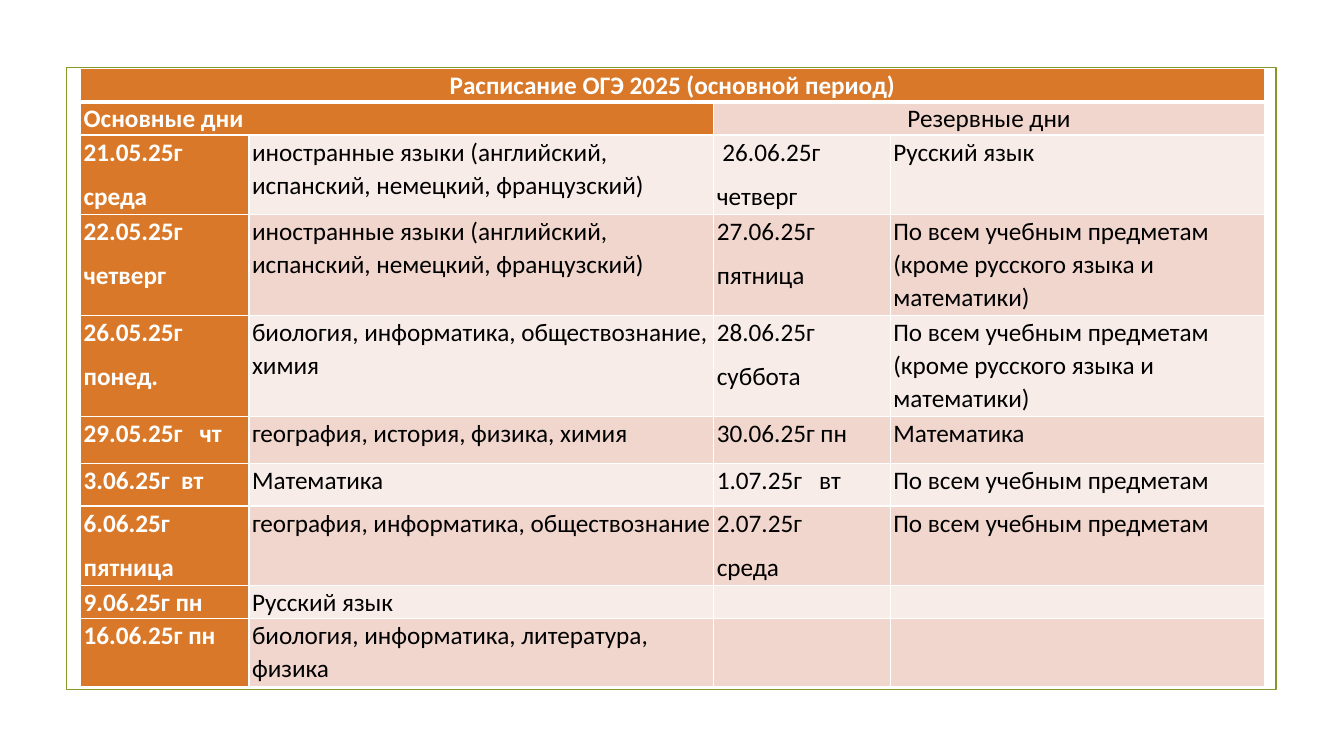
from dataclasses import dataclass

from lxml.etree import SubElement
from pptx import Presentation
from pptx.dml.color import RGBColor
from pptx.enum.shapes import MSO_SHAPE
from pptx.enum.text import PP_ALIGN
from pptx.oxml.ns import qn
from pptx.util import Inches, Pt


@dataclass(frozen=True)
class Theme:
    font: str = "Calibri"
    size: int = 18
    header: str = "D97828"
    dark_band: str = "F1D6CD"
    light_band: str = "F8ECE8"
    frame: str = "83992A"
    white: str = "FFFFFF"
    black: str = "000000"


THEME = Theme()
COLUMN_WIDTHS = [1.67, 4.61, 1.75, 3.71]
ROW_HEIGHTS = [0.33, 0.33, 0.79, 1, 1, 0.47, 0.42, 0.79, 0.33, 0.67]

TITLE = "Расписание ОГЭ 2025 (основной период)"
LANGUAGES = "иностранные языки (английский, испанский, немецкий, французский)"
ALL_SUBJECTS = "По всем учебным предметам"
MOST_SUBJECTS = ALL_SUBJECTS + " (кроме русского языка и математики)"
EXAM_ROWS = [
    ("21.05.25г\nсреда", LANGUAGES, " 26.06.25г\nчетверг", "Русский язык"),
    ("22.05.25г\nчетверг", LANGUAGES, "27.06.25г\nпятница", MOST_SUBJECTS),
    ("26.05.25г\nпонед.", "биология, информатика, обществознание, химия",
     "28.06.25г\nсуббота", MOST_SUBJECTS),
    ("29.05.25г   чт", "география, история, физика, химия", "30.06.25г пн", "Математика"),
    ("3.06.25г  вт", "Математика", "1.07.25г   вт", ALL_SUBJECTS),
    ("6.06.25г\nпятница", "география, информатика, обществознание",
     "2.07.25г\nсреда", ALL_SUBJECTS),
    ("9.06.25г пн", "Русский язык", "", ""),
    ("16.06.25г пн", "биология, информатика, литература, физика", "", ""),
]


def color(value):
    return RGBColor.from_string(value)


def set_all(target, values):
    for name, value in values.items():
        setattr(target, name, value)


def add_frame(page):
    frame = page.shapes.add_shape(
        MSO_SHAPE.RECTANGLE, Inches(0.66), Inches(0.67), Inches(12), Inches(6.17))
    frame.shadow.inherit = False
    frame.fill.background()
    frame.line.color.rgb = color(THEME.frame)
    frame.line.width = Pt(1.25)


def set_borders(cell, bottom_width=1):
    properties = cell._tc.get_or_add_tcPr()
    for side, width in (("L", 1), ("R", 1), ("T", 1), ("B", bottom_width)):
        line = SubElement(properties, qn(f"a:ln{side}"), w=str(Pt(width)))
        fill = SubElement(line, qn("a:solidFill"))
        SubElement(fill, qn("a:srgbClr"), val=THEME.white)


def style_cell(cell, fill, bottom_width=1):
    set_all(cell, {"margin_left": Inches(0.03), "margin_right": Inches(0.03),
                   "margin_top": 0, "margin_bottom": 0})
    set_borders(cell, bottom_width)
    cell.fill.solid()
    cell.fill.fore_color.rgb = color(fill)


def write_cell(cell, text, heading=False, align=PP_ALIGN.LEFT):
    """Write one paragraph per line of text."""
    frame = cell.text_frame
    for index, line in enumerate(text.split("\n")):
        para = frame.paragraphs[0] if index == 0 else frame.add_paragraph()
        set_all(para, {"alignment": align, "line_spacing": 1.07, "space_after": Pt(8)})
        span = para.add_run()
        span.text = line
        set_all(span.font, {"name": THEME.font, "size": Pt(THEME.size), "bold": heading})
        span.font.color.rgb = color(THEME.white if heading else THEME.black)


def add_schedule(page):
    table = page.shapes.add_table(
        len(ROW_HEIGHTS), len(COLUMN_WIDTHS), Inches(0.8), Inches(0.68),
        Inches(sum(COLUMN_WIDTHS)), Inches(sum(ROW_HEIGHTS))).table
    for column, width in zip(table.columns, COLUMN_WIDTHS):
        column.width = Inches(width)
    for row, height in zip(table.rows, ROW_HEIGHTS):
        row.height = Inches(height)

    for row_index, row in enumerate(table.rows):
        band = THEME.dark_band if row_index % 2 else THEME.light_band
        for column_index, cell in enumerate(row.cells):
            is_header = row_index == 0 or column_index == 0
            style_cell(cell, THEME.header if is_header else band,
                       bottom_width=3 if row_index == 0 else 1)

    table.cell(0, 0).merge(table.cell(0, 3))
    table.cell(1, 0).merge(table.cell(1, 1))
    table.cell(1, 2).merge(table.cell(1, 3))
    write_cell(table.cell(0, 0), TITLE, heading=True, align=PP_ALIGN.CENTER)
    write_cell(table.cell(1, 0), "Основные дни", heading=True)
    write_cell(table.cell(1, 2), "Резервные дни", align=PP_ALIGN.CENTER)
    for row_index, texts in enumerate(EXAM_ROWS, start=2):
        for column_index, text in enumerate(texts):
            if text:
                write_cell(table.cell(row_index, column_index), text,
                           heading=column_index == 0)


def main():
    deck = Presentation()
    set_all(deck, {"slide_width": Inches(13.33), "slide_height": Inches(7.5)})
    page = deck.slides.add_slide(deck.slide_layouts[6])
    add_frame(page)
    add_schedule(page)
    deck.save("out.pptx")


if __name__ == "__main__":
    main()
